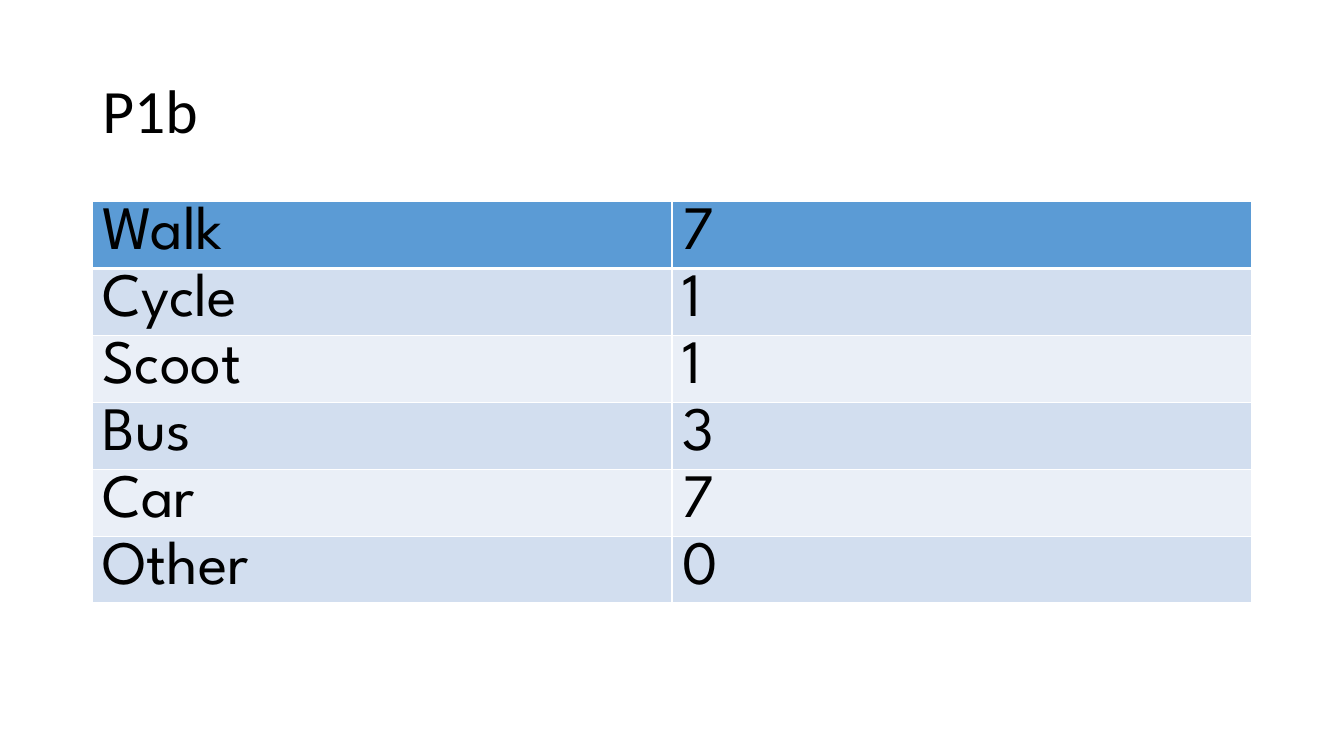
import pptx
import pptx.dml.color
import pptx.enum.text
import pptx.oxml
import pptx.oxml.ns
import pptx.util

Pt = pptx.util.Pt
LEFT, WIDTH = 66, 828
ROW_HEIGHT = 47.8
HEADER_FILL = "5B9BD5"
BAND_FILLS = ("D2DEEF", "EAEFF7")
TRAVEL_COUNTS = [
    ("Walk", 7),
    ("Cycle", 1),
    ("Scoot", 1),
    ("Bus", 3),
    ("Car", 7),
    ("Other", 0),
]


def color(value):
    return pptx.dml.color.RGBColor.from_string(value)


def set_attributes(target, values):
    for name, value in values.items():
        setattr(target, name, value)


def format_paragraph(paragraph, font_name):
    paragraph.alignment = pptx.enum.text.PP_ALIGN.LEFT
    set_attributes(paragraph.font, {"name": font_name, "size": Pt(44)})
    paragraph.font.color.rgb = color("000000")


def add_title(slide, text):
    title = slide.shapes.title
    set_attributes(title, {
        "left": Pt(LEFT), "top": Pt(28.8), "width": Pt(WIDTH), "height": Pt(104.4),
    })
    set_attributes(title.text_frame, {
        "text": text,
        "word_wrap": True,
        "auto_size": pptx.enum.text.MSO_AUTO_SIZE.NONE,
        "vertical_anchor": pptx.enum.text.MSO_ANCHOR.MIDDLE,
    })
    paragraph = title.text_frame.paragraphs[0]
    paragraph.line_spacing = 0.9
    format_paragraph(paragraph, "Calibri")


def add_border(cell, side, width):
    namespace = pptx.oxml.ns.nsdecls("a")
    cell._tc.get_or_add_tcPr().append(pptx.oxml.parse_xml(
        f'<a:ln{side} {namespace} w="{Pt(width)}"><a:solidFill>'
        f'<a:srgbClr val="FFFFFF"/></a:solidFill></a:ln{side}>'
    ))


def format_cell(cell, text, fill, border_widths):
    cell.text = text
    format_paragraph(cell.text_frame.paragraphs[0], "League Spartan")
    for side, width in border_widths.items():
        add_border(cell, side, width)
    cell.fill.solid()
    cell.fill.fore_color.rgb = color(fill)


def add_travel_table(slide, records):
    row_count, column_count = len(records), len(records[0])
    table = slide.shapes.add_table(
        row_count, column_count, Pt(LEFT), Pt(144), Pt(WIDTH), Pt(ROW_HEIGHT * row_count)
    ).table
    for row_index, record in enumerate(records):
        table.rows[row_index].height = Pt(ROW_HEIGHT)
        fill = BAND_FILLS[(row_index - 1) % 2] if row_index else HEADER_FILL
        border_widths = {
            "L": 1,
            "R": 1,
            "T": 3 if row_index == 1 else 1,
            "B": 3 if row_index == 0 else 1,
        }
        for column_index, value in enumerate(record):
            format_cell(table.cell(row_index, column_index), str(value), fill, border_widths)


def main():
    presentation = pptx.Presentation()
    set_attributes(presentation, {"slide_width": Pt(960), "slide_height": Pt(540)})
    slide = presentation.slides.add_slide(presentation.slide_layouts[5])
    add_title(slide, "P1b")
    add_travel_table(slide, TRAVEL_COUNTS)
    presentation.save("out.pptx")


if __name__ == "__main__":
    main()
